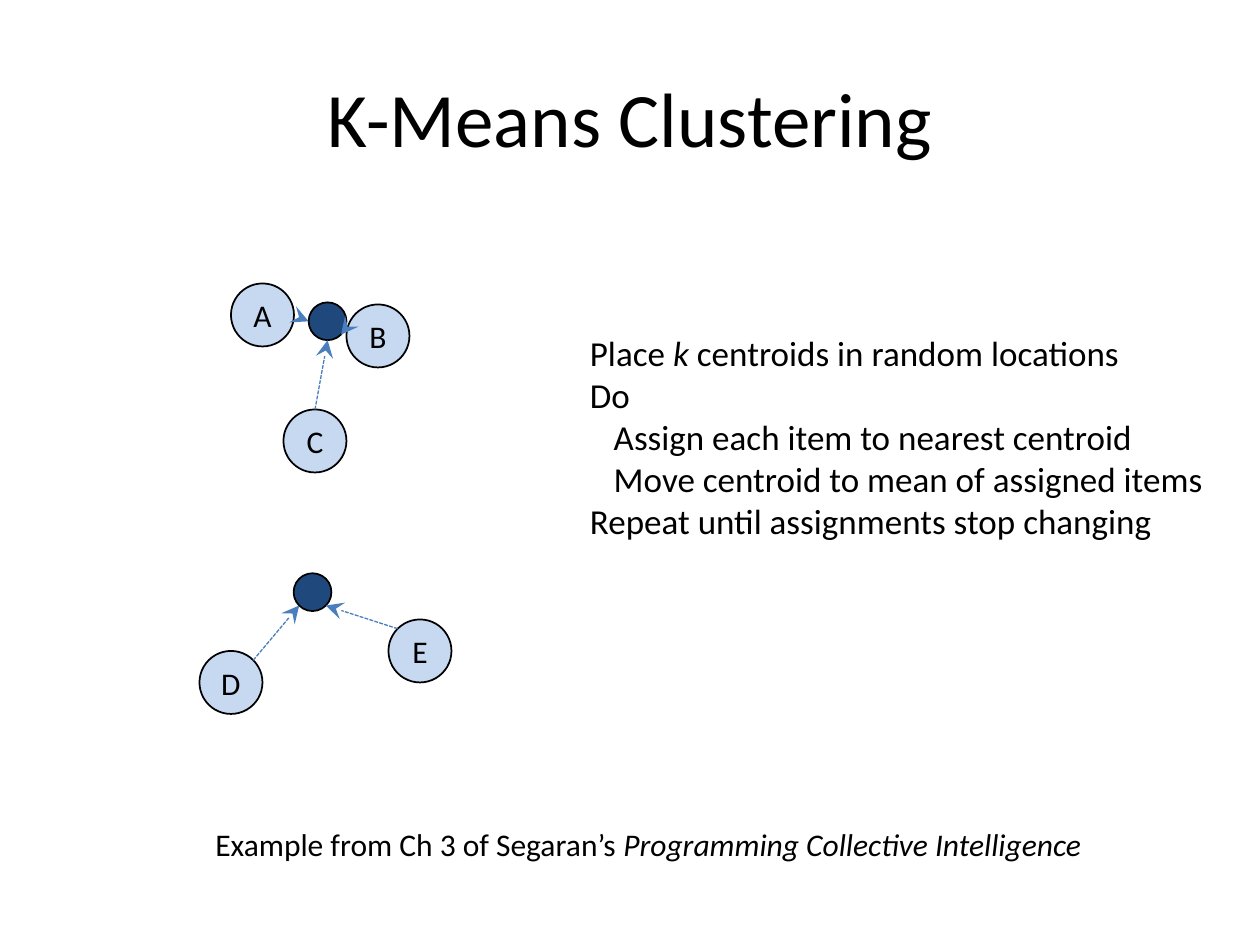
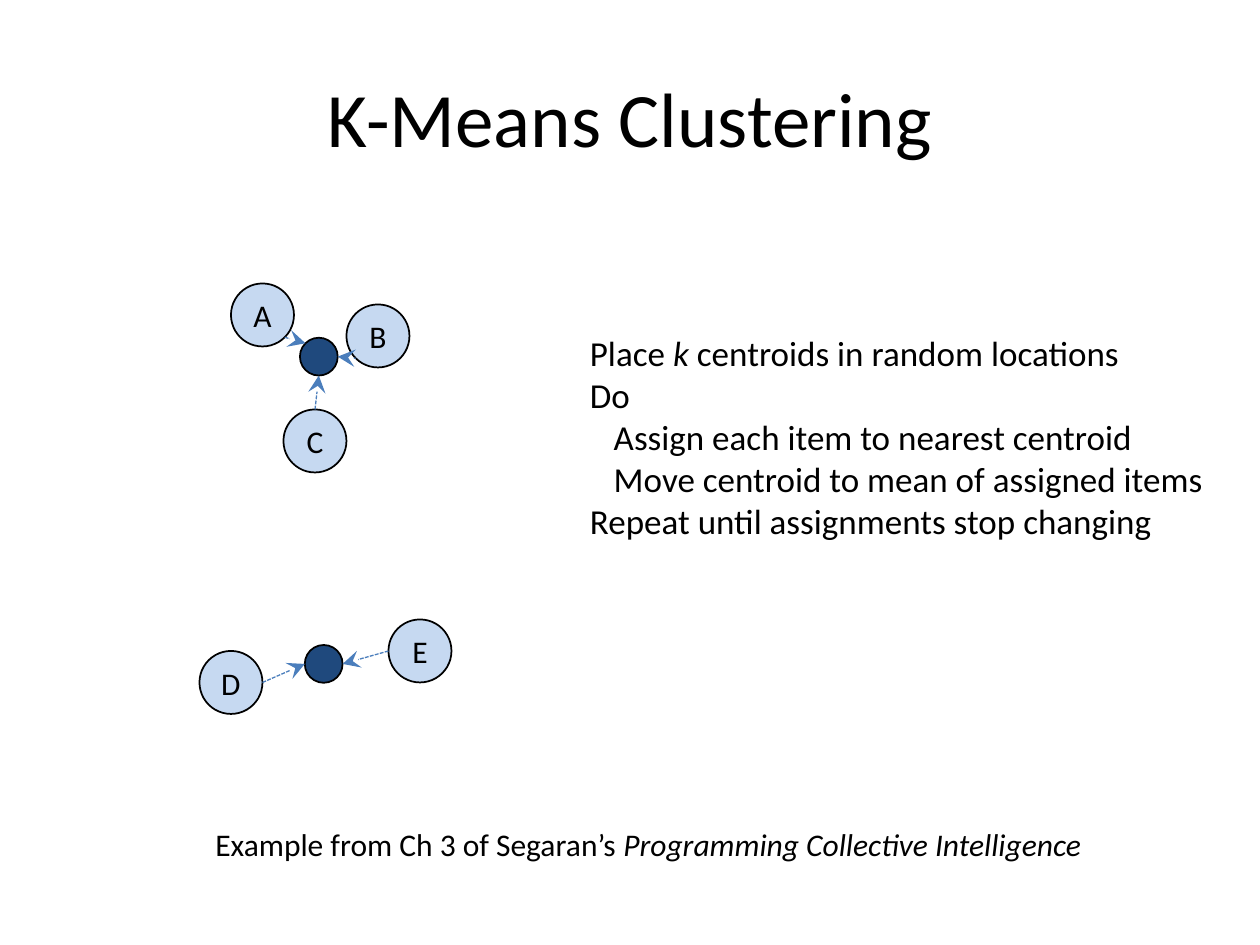
import math

import pptx
import pptx.dml.color
import pptx.enum.dml
import pptx.enum.shapes
import pptx.enum.text
import pptx.oxml
import pptx.oxml.ns
import pptx.util

Pt = pptx.util.Pt
RGB = pptx.dml.color.RGBColor.from_string
CENTER = pptx.enum.text.PP_ALIGN.CENTER
LEFT = pptx.enum.text.PP_ALIGN.LEFT
MIDDLE = pptx.enum.text.MSO_ANCHOR.MIDDLE
TOP = pptx.enum.text.MSO_ANCHOR.TOP

COLORS = {"text": "000000", "item": "C6D9F1", "centroid": "1F497D", "arrow": "4B7EBC"}
FONT = "Calibri"
ITEM_RADIUS = 18
CENTROID_RADIUS = 10.8
STEP_INDENT = 13.6

# Texts on every slide: box, size, alignment, anchor, and lines of
# (indent level, runs), where every second run is italic.
texts = [
    ((36, 21.6, 648, 90), 44, CENTER, MIDDLE, [(0, ["K-Means Clustering"])]),
    ((330, 186, 378, 128), 20, LEFT, TOP, [
        (0, ["Place ", "k", " centroids in random locations"]),
        (0, ["Do"]),
        (1, ["Assign each item to nearest centroid"]),
        (1, ["Move centroid to mean of assigned items"]),
        (0, ["Repeat until assignments stop changing"]),
    ]),
    ((106.5, 468, 528, 29), 18, CENTER, TOP, [
        (0, ["Example from Ch 3 of Segaran’s ", "Programming Collective Intelligence"]),
    ]),
]

item_centers = {"A": (150, 180), "B": (216, 192), "C": (180, 252),
                "D": (132, 390), "E": (240, 372)}

# Per slide: centroid centres, and for each item the index of its centroid and
# the angles (clockwise from the right) where its arrow leaves and arrives.
iterations = [
    ([(187.2, 183.6), (178.6, 338.4)],
     {"B": (0, 199, 45), "A": (0, 0, 180), "C": (0, 270, 90),
      "D": (1, 315, 135), "E": (1, 225, 45)}),
    ([(182.2, 203.8), (185, 379.4)],
     {"B": (0, 135, 0), "A": (0, 45, 225), "C": (0, 270, 90),
      "D": (1, 0, 180), "E": (1, 180, 0)}),
]


def add_circle(slide, center, radius, color):
    x, y = center
    circle = slide.shapes.add_shape(
        pptx.enum.shapes.MSO_SHAPE.OVAL,
        Pt(x - radius), Pt(y - radius), Pt(2 * radius), Pt(2 * radius))
    circle.shadow.inherit = False
    circle.fill.solid()
    circle.fill.fore_color.rgb = RGB(color)
    circle.line.color.rgb = RGB(COLORS["text"])
    circle.line.width = Pt(1)
    return circle


def rim_point(center, radius, degrees):
    angle = math.radians(degrees)
    return (Pt(center[0] + radius * math.cos(angle)),
            Pt(center[1] + radius * math.sin(angle)))


presentation = pptx.Presentation()
presentation.slide_width = Pt(720)
presentation.slide_height = Pt(540)

for centroids, assignments in iterations:
    slide = presentation.slides.add_slide(presentation.slide_layouts[6])

    for box, size, alignment, anchor, lines in texts:
        frame = slide.shapes.add_textbox(*map(Pt, box)).text_frame
        frame.word_wrap = True
        frame.vertical_anchor = anchor
        for number, (level, runs) in enumerate(lines):
            paragraph = frame.add_paragraph() if number else frame.paragraphs[0]
            paragraph.alignment = alignment
            paragraph.font.name = FONT
            paragraph.font.size = Pt(size)
            paragraph.font.color.rgb = RGB(COLORS["text"])
            if level:
                paragraph._p.get_or_add_pPr().set("marL", str(Pt(level * STEP_INDENT)))
            for position, words in enumerate(runs):
                run = paragraph.add_run()
                run.text = words
                if position % 2:
                    run.font.italic = True

    for letter, center in item_centers.items():
        frame = add_circle(slide, center, ITEM_RADIUS, COLORS["item"]).text_frame
        frame.vertical_anchor = MIDDLE
        label = frame.paragraphs[0]
        label.text = letter
        label.alignment = CENTER
        label.font.name = FONT
        label.font.size = Pt(18)
        label.font.color.rgb = RGB(COLORS["text"])

    for center in centroids:
        add_circle(slide, center, CENTROID_RADIUS, COLORS["centroid"])

    for letter, (cluster, leave, arrive) in assignments.items():
        arrow = slide.shapes.add_connector(
            pptx.enum.shapes.MSO_CONNECTOR.STRAIGHT,
            *rim_point(item_centers[letter], ITEM_RADIUS, leave),
            *rim_point(centroids[cluster], CENTROID_RADIUS, arrive))
        arrow.line.color.rgb = RGB(COLORS["arrow"])
        arrow.line.width = Pt(0.75)
        arrow.line.dash_style = pptx.enum.dml.MSO_LINE.SQUARE_DOT
        head = pptx.oxml.parse_xml(
            f'<a:tailEnd {pptx.oxml.ns.nsdecls("a")} type="stealth" w="lg" len="lg"/>')
        arrow.line._get_or_add_ln().append(head)
        no_shadow = pptx.oxml.parse_xml(f'<a:effectLst {pptx.oxml.ns.nsdecls("a")}/>')
        arrow._element.spPr.append(no_shadow)

presentation.save("out.pptx")
